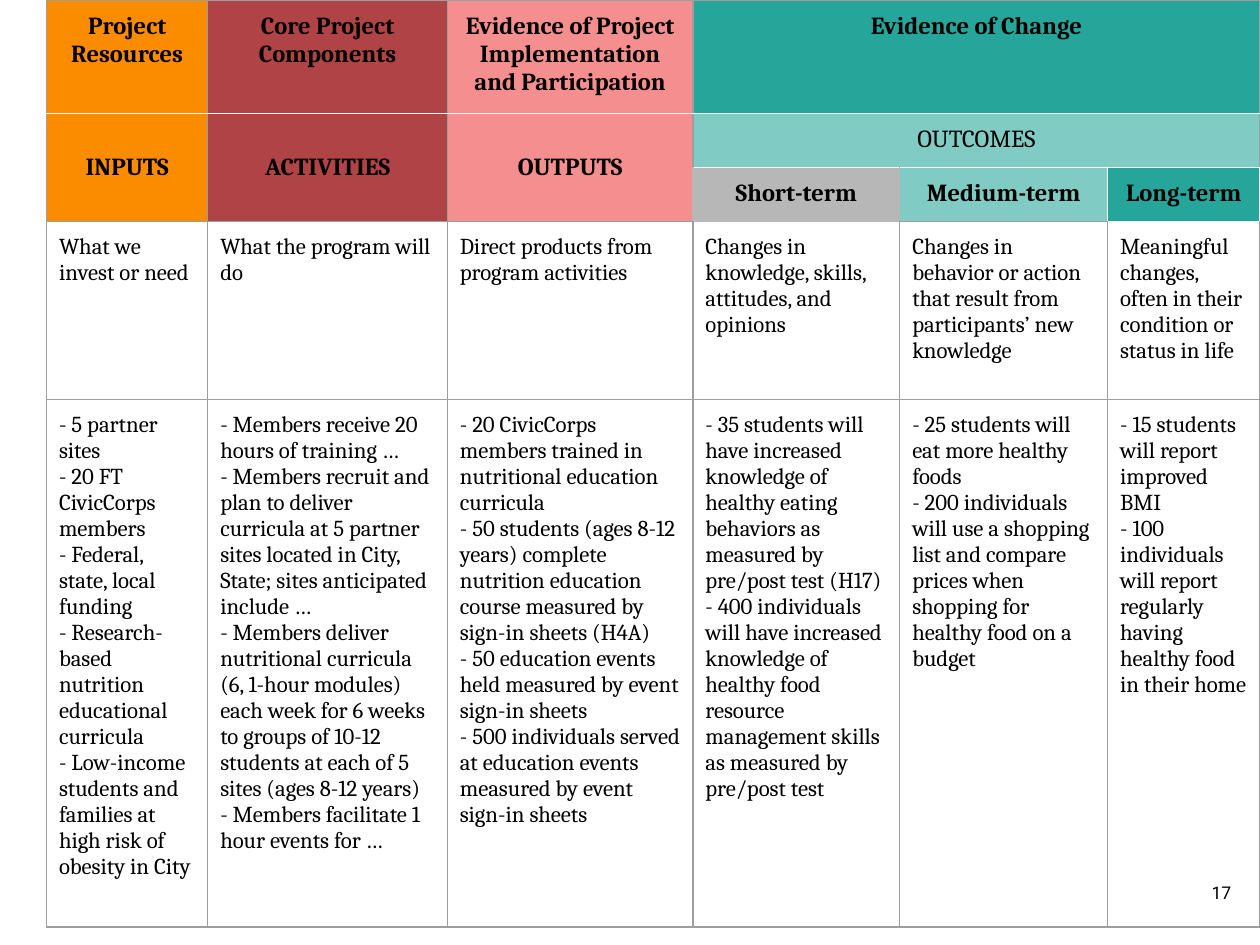
from lxml import etree
from pptx import Presentation
from pptx import util as u
from pptx.dml.color import RGBColor
from pptx.enum import text
from pptx.oxml import ns

COLOURS = {
    "orange": "FB8C00", "red": "AF4345", "pink": "F58F8F",
    "teal": "26A69A", "mint": "80CBC4", "silver": "B7B7B7",
    "grey": "9E9E9E", "cream": "FFFBF0", "white": "FFFFFF", "black": "000000",
}
COLUMN_WIDTHS = [3.25, 4.83, 4.95, 4.17, 4.19, 3.07]
ROW_HEIGHTS = [2.28, 1.09, 1.09, 3.58, 10.64]

# Border colours in the order left, right, top, bottom
GRID = ("grey",) * 4
TITLE = ("grey", "grey", "grey", "white")
STAGE = ("grey", "grey", "white", "grey")
OUTCOME = ("grey", "grey", "white", "white")

# row, column, rows spanned, columns spanned, wording, fill, borders
HEADINGS = [
    (0, 0, 1, 1, "Project Resources", "orange", TITLE),
    (0, 1, 1, 1, "Core Project Components", "red", TITLE),
    (0, 2, 1, 1, "Evidence of Project Implementation and Participation", "pink", TITLE),
    (0, 3, 1, 3, "Evidence of Change", "teal", TITLE),
    (1, 0, 2, 1, "INPUTS", "orange", STAGE),
    (1, 1, 2, 1, "ACTIVITIES", "red", STAGE),
    (1, 2, 2, 1, "OUTPUTS", "pink", STAGE),
    (1, 3, 1, 3, "OUTCOMES", "mint", OUTCOME),
    (2, 3, 1, 1, "Short-term", "silver", ("silver", "silver", "white", "silver")),
    (2, 4, 1, 1, "Medium-term", "mint", ("silver", "cream", "white", "grey")),
    (2, 5, 1, 1, "Long-term", "teal", ("cream", "cream", "white", "cream")),
]
DEFINITIONS = [
    "What we invest or need",
    "What the program will do",
    "Direct products from program activities",
    "Changes in knowledge, skills, attitudes, and opinions",
    "Changes in behavior or action that result from participants’ new knowledge",
    "Meaningful changes, often in their condition or status in life",
]
DEFINITION_TOPS = {3: "silver", 5: "cream"}
DETAILS = [
    ["- 5 partner sites",
     "- 20 FT CivicCorps members",
     "- Federal, state, local funding",
     "- Research- based nutrition educational curricula",
     "- Low-income students and families at high risk of obesity in City"],
    ["- Members receive 20 hours of training …",
     "- Members recruit and plan to deliver curricula at 5 partner sites located in City, "
     "State; sites anticipated include …",
     "- Members deliver nutritional curricula (6, 1-hour modules) each week for 6 weeks "
     "to groups of 10-12 students at each of 5 sites (ages 8-12 years)",
     "- Members facilitate 1 hour events for …"],
    ["- 20 CivicCorps members trained in nutritional education curricula",
     "- 50 students (ages 8-12 years) complete nutrition education course measured by "
     "sign-in sheets (H4A)",
     "- 50 education events held measured by event sign-in sheets",
     "- 500 individuals served at education events measured by event sign-in sheets"],
    ["- 35 students will have increased knowledge of healthy eating behaviors as measured "
     "by pre/post test (H17)",
     "- 400 individuals will have increased knowledge of healthy food resource management "
     "skills as measured by pre/post test"],
    ["- 25 students will eat more healthy foods",
     "- 200 individuals will use a shopping list and compare prices when shopping for "
     "healthy food on a budget"],
    ["- 15 students will report improved BMI",
     "- 100 individuals will report regularly having healthy food in their home"],
]


class LogicModel:
    """Holds the slide and the style of its table."""

    font = "Cambria"
    margin = u.Cm(0.25)
    border = u.Pt(0.75)

    def __init__(self, slide):
        self.slide = slide

    def wording(self, frame, content, size, font, bold=False, align=text.PP_ALIGN.LEFT):
        frame.text = content
        for para in frame.paragraphs:
            para.alignment = align
            for span in para.runs:
                span.font.name = font
                span.font.size = u.Pt(size)
                span.font.bold = bold
                span.font.color.rgb = RGBColor.from_string(COLOURS["black"])

    def page_number(self, number):
        box = self.slide.shapes.add_textbox(u.Cm(23.55), u.Cm(17.27), u.Cm(1.52), u.Cm(1.45))
        frame = box.text_frame
        frame.word_wrap = True
        frame.vertical_anchor = text.MSO_ANCHOR.MIDDLE
        self.wording(frame, number, 10, "Roboto", align=text.PP_ALIGN.RIGHT)

    def table(self, left, top):
        frame = self.slide.shapes.add_table(
            len(ROW_HEIGHTS), len(COLUMN_WIDTHS), u.Cm(left), u.Cm(top),
            u.Cm(sum(COLUMN_WIDTHS)), u.Cm(sum(ROW_HEIGHTS)))
        table = frame.table
        table.first_row = table.horz_banding = False
        for column, width in zip(table.columns, COLUMN_WIDTHS):
            column.width = u.Cm(width)
        for row, height in zip(table.rows, ROW_HEIGHTS):
            row.height = u.Cm(height)
        return table

    def borders(self, cell, edges):
        properties = cell._tc.get_or_add_tcPr()
        for index, (side, colour) in enumerate(zip("LRTB", edges)):
            line = etree.Element(ns.qn(f"a:ln{side}"), w=str(self.border))
            fill = etree.SubElement(line, ns.qn("a:solidFill"))
            etree.SubElement(fill, ns.qn("a:srgbClr"), val=COLOURS[colour])
            properties.insert(index, line)

    def cell(self, cell, content, size, edges, **style):
        cell.margin_left = cell.margin_right = self.margin
        cell.margin_top = cell.margin_bottom = self.margin
        self.wording(cell.text_frame, content, size, self.font, **style)
        cell.fill.background()
        self.borders(cell, edges)

    def heading(self, table, row, column, rows, columns, content, fill, edges):
        cell = table.cell(row, column)
        if rows * columns > 1:
            cell.merge(table.cell(row + rows - 1, column + columns - 1))
        self.cell(cell, content, 14, edges, bold=content != "OUTCOMES",
                  align=text.PP_ALIGN.CENTER)
        cell.fill.solid()
        cell.fill.fore_color.rgb = RGBColor.from_string(COLOURS[fill])
        if rows > 1:
            cell.vertical_anchor = text.MSO_ANCHOR.MIDDLE


def main():
    deck = Presentation()
    deck.slide_width, deck.slide_height = u.Cm(25.4), u.Cm(19.05)
    model = LogicModel(deck.slides.add_slide(deck.slide_layouts[6]))

    # Page number, behind the table
    model.page_number("17")

    # Coloured headings
    table = model.table(0.94, 0)
    for heading in HEADINGS:
        model.heading(table, *heading)

    # Definitions and project details
    for column, (definition, details) in enumerate(zip(DEFINITIONS, DETAILS)):
        edges = ("grey", "grey", DEFINITION_TOPS.get(column, "grey"), "grey")
        model.cell(table.cell(3, column), definition, 13, edges)
        model.cell(table.cell(4, column), "\n".join(details), 13, GRID)

    deck.save("out.pptx")


if __name__ == "__main__":
    main()
